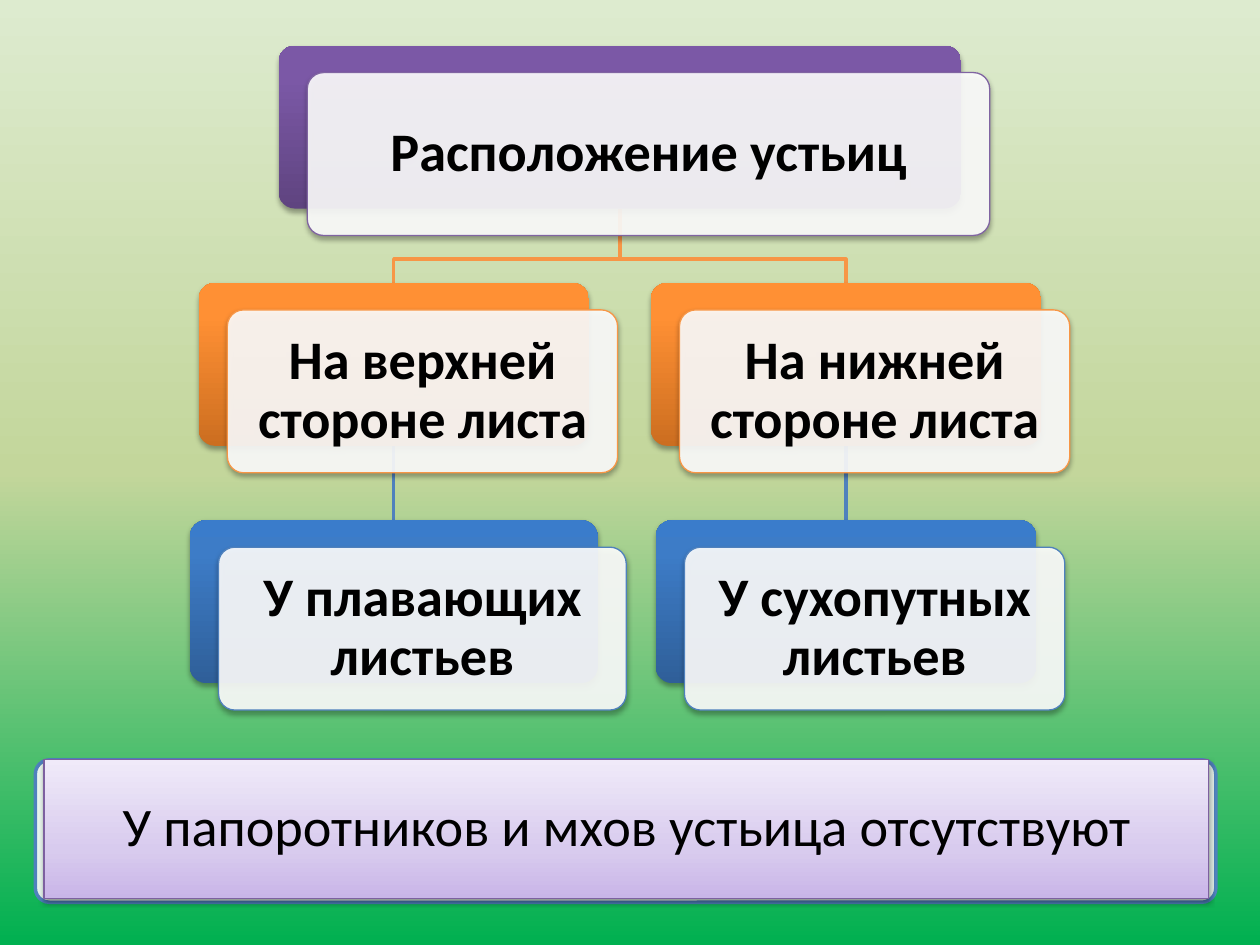
"""Build a slide with a tree of stomata locations and a closing note."""
import lxml.etree
import pptx
import pptx.dml.color
import pptx.enum.shapes
import pptx.enum.text
import pptx.oxml.ns
import pptx.util

Pt = pptx.util.Pt
RGB = pptx.dml.color.RGBColor.from_string
SHAPES = pptx.enum.shapes.MSO_SHAPE
qn = pptx.oxml.ns.qn

THEME = {
    "background": [(0, "DDEBCF"), (50, "C3D69B"), (100, "00B050")],
    "purple": {"line": "8064A2", "stops": [(0, "5F4480"), (80, "7B58A6"), (100, "7C57A8")]},
    "orange": {"line": "F79646", "stops": [(0, "CC6E20"), (80, "FF9034"), (100, "FF9136")]},
    "blue": {"line": "4F81BD", "stops": [(0, "2F5F99"), (80, "3D7CC7"), (100, "3A7CCB")]},
    "note": {"line": "7D60A0", "stops": [(0, "C9B5E8"), (35, "D8CBEE"), (100, "F0EAF9")]},
    "card": "FFFFFF",
    "shadow": "000000",
    "font": {"name": "Calibri", "size": Pt(31)},
    "text": "000000",
    "frame": {
        "word_wrap": True,
        "vertical_anchor": pptx.enum.text.MSO_ANCHOR.MIDDLE,
        **{f"margin_{side}": Pt(9.4) for side in ("left", "top", "right", "bottom")},
    },
    "paragraph": {"alignment": pptx.enum.text.PP_ALIGN.CENTER, "line_spacing": 0.9},
}


def paint_gradient(owner, fill, stops, angle):
    fill.gradient()
    fill.gradient_angle = angle
    stop_list = next(owner.element.iter(qn("a:gsLst")))
    for old_stop in list(stop_list):
        stop_list.remove(old_stop)
    for position, color in stops:
        stop = lxml.etree.SubElement(stop_list, qn("a:gs"), pos=str(position * 1000))
        lxml.etree.SubElement(stop, qn("a:srgbClr"), val=color)


def add_panel(kind, box, stops=None, line=None, line_width=0.75, shadow=35, text=None, bold=None):
    panel = slide.shapes.add_shape(kind, *map(Pt, box))
    panel.shadow.inherit = False
    if kind == SHAPES.ROUNDED_RECTANGLE:
        panel.adjustments[0] = 0.1
    if stops:
        paint_gradient(panel, panel.fill, stops, 90)
    else:
        panel.fill.solid()
        panel.fill.fore_color.rgb = RGB(THEME["card"])
        card_color = next(panel.element.spPr.iter(qn("a:srgbClr")))
        lxml.etree.SubElement(card_color, qn("a:alpha"), val="90000")
    if line:
        panel.line.color.rgb = RGB(line)
        panel.line.width = Pt(line_width)
    else:
        panel.line.fill.background()
    if shadow:
        outer = lxml.etree.SubElement(
            panel.element.spPr.find(qn("a:effectLst")), qn("a:outerShdw"),
            blurRad=str(Pt(3.1)), dist=str(Pt(1.8)), dir="5400000", rotWithShape="0")
        shade = lxml.etree.SubElement(outer, qn("a:srgbClr"), val=THEME["shadow"])
        lxml.etree.SubElement(shade, qn("a:alpha"), val=str(shadow * 1000))
    if text:
        frame = panel.text_frame
        frame.text = text
        paragraph = frame.paragraphs[0]
        font = paragraph.runs[0].font
        for target, values in ((frame, THEME["frame"]), (paragraph, THEME["paragraph"]),
                               (font, {**THEME["font"], "bold": bold})):
            for attribute, value in values.items():
                setattr(target, attribute, value)
        font.color.rgb = RGB(THEME["text"])


presentation = pptx.Presentation()
presentation.slide_width, presentation.slide_height = Pt(720), Pt(540)
slide = presentation.slides.add_slide(presentation.slide_layouts[6])
paint_gradient(slide, slide.background.fill, THEME["background"], 270)

root_center, branch_offset = 354.2, 129.2
left_center, right_center = root_center - branch_offset, root_center + branch_offset
node_height, level_step, first_top = 93.1, 135.6, 26.1
card_shift_x, card_shift_y = 16.4, 15.4
level_tops = [first_top + level * level_step for level in range(3)]
root_bottom, side_bottom = (top + node_height for top in level_tops[:2])
bend = 148.1

for center in (right_center, left_center):
    stem = slide.shapes.add_connector(
        pptx.enum.shapes.MSO_CONNECTOR.STRAIGHT,
        Pt(center), Pt(side_bottom), Pt(center), Pt(level_tops[2]))
    lxml.etree.SubElement(stem.element.spPr, qn("a:effectLst"))
    route = slide.shapes.build_freeform(Pt(root_center), Pt(root_bottom))
    route.add_line_segments(
        [(Pt(x), Pt(y)) for x, y in
         ((root_center, bend), (center, bend), (center, level_tops[1]))], close=False)
    branch = route.convert_to_shape()
    branch.shadow.inherit = False
    branch.fill.background()
    for link, color in ((stem, "blue"), (branch, "orange")):
        link.line.color.rgb = RGB(THEME[color]["line"])
        link.line.width = Pt(2)

nodes = [
    ("Расположение устьиц", root_center, 0, 390, "purple"),
    ("На верхней стороне листа", left_center, 1, 223, "orange"),
    ("У плавающих листьев", left_center, 2, 233, "blue"),
    ("На нижней стороне листа", right_center, 1, 223, "orange"),
    ("У сухопутных листьев", right_center, 2, 217.4, "blue"),
]
for label, center, level, width, color in nodes:
    left, top = center - width / 2, level_tops[level]
    add_panel(SHAPES.ROUNDED_RECTANGLE, (left, top, width, node_height),
              stops=THEME[color]["stops"])
    add_panel(SHAPES.ROUNDED_RECTANGLE,
              (left + card_shift_x, top + card_shift_y, width, node_height),
              line=THEME[color]["line"], text=label, bold=True)

add_panel(SHAPES.ROUNDED_RECTANGLE, (20.2, 434.2, 674.6, 81.4),
          line=THEME["blue"]["line"], line_width=2, shadow=None)
add_panel(SHAPES.RECTANGLE, (25.2, 434.2, 665.3, 79.2), stops=THEME["note"]["stops"],
          line=THEME["note"]["line"], shadow=38,
          text="У папоротников и мхов устьица отсутствуют")

presentation.save("out.pptx")
